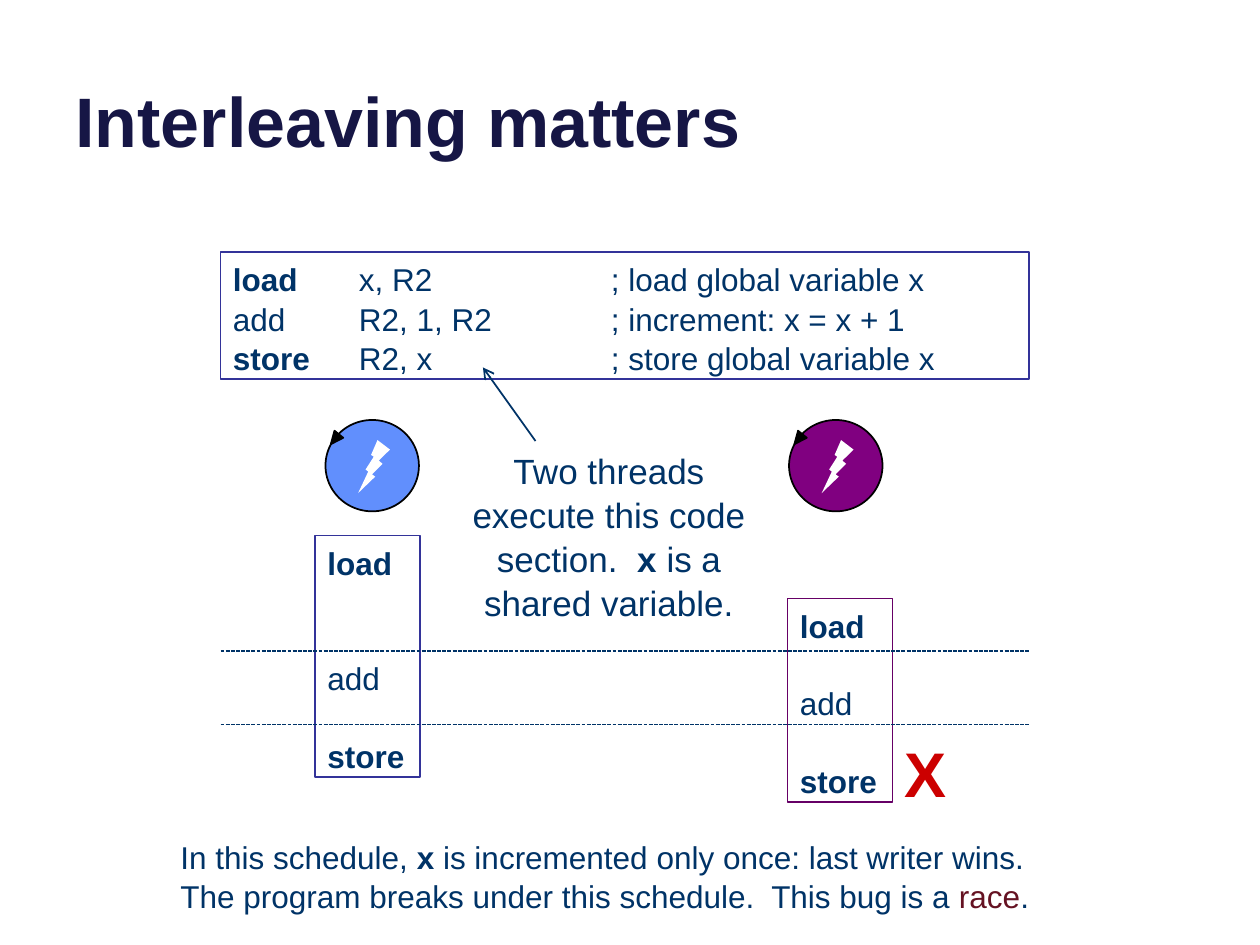
from lxml.etree import SubElement
from pptx import Presentation
from pptx.dml.color import RGBColor
from pptx.enum.dml import MSO_LINE
from pptx.enum.shapes import MSO_CONNECTOR as Link, MSO_SHAPE as Preset
from pptx.enum.text import MSO_ANCHOR as Anchor, MSO_AUTO_SIZE as AutoSize, PP_ALIGN as Align
from pptx.oxml.ns import qn
from pptx.util import Inches, Pt

UNIT = Inches(1) / 12
INK, NAVY, INDIGO, PLUM = "003367", "161645", "333399", "660066"
BLACK, WHITE, RED, MAROON = "000000", "FFFFFF", "CC0000", "651222"
LINE_SPACING = 1.05
BLANK_LINE = 21.7


def color(value):
    """Turn a hex string into a colour."""
    return RGBColor.from_string(value)


def place(box):
    """Turn a box in grid units (twelve to the inch) into lengths."""
    return [round(value * UNIT) for value in box]


def add_span(para, text, size=18, ink=INK, bold=False):
    """Add one formatted run to a paragraph."""
    span = para.add_run()
    span.text = text
    span.font.name, span.font.size, span.font.bold = "Arial", Pt(size), bold
    span.font.color.rgb = color(ink)


def write(frame, lines, align=Align.LEFT, blanks=(), tabs=()):
    """Fill a text frame with lines, each a list of span arguments."""
    frame.word_wrap = True
    frame.auto_size = AutoSize.NONE
    frame.vertical_anchor = Anchor.TOP
    for index, spans in enumerate(lines):
        para = frame.add_paragraph() if index else frame.paragraphs[0]
        para.alignment = align
        para.line_spacing = LINE_SPACING
        if blanks:
            para.space_before = Pt(blanks[index] * BLANK_LINE)
        if tabs:
            stops = SubElement(para._p.get_or_add_pPr(), qn("a:tabLst"))
            for inches in tabs:
                SubElement(stops, qn("a:tab"), pos=str(Inches(inches)), algn="l")
        for span in spans:
            add_span(para, *span)


def add_preset(parent, preset, box, fill, line=None):
    """Add a filled preset shape, outlined if a line colour is given."""
    shape = parent.shapes.add_shape(preset, *place(box))
    shape.shadow.inherit = False
    shape.fill.solid()
    shape.fill.fore_color.rgb = color(fill)
    if line:
        shape.line.color.rgb = color(line)
        shape.line.width = Pt(1)
    else:
        shape.line.fill.background()
    return shape


def add_note(page, box, lines, align=Align.LEFT):
    """Add a plain text box."""
    write(page.shapes.add_textbox(*place(box)).text_frame, lines, align)


def add_line(page, ends, width, dash=None, arrow=False):
    """Add a straight line, dashed or with an arrowhead at its end."""
    line = page.shapes.add_connector(Link.STRAIGHT, *place(ends))
    line.line.color.rgb = color(INK)
    line.line.width = Pt(width)
    if dash:
        line.line.dash_style = dash
    if arrow:
        SubElement(line.line._get_or_add_ln(), qn("a:tailEnd"), type="arrow")
    SubElement(line._element.spPr, qn("a:effectLst"))


def add_title(page, box, text):
    """Place and format the title."""
    title = page.shapes.title
    title.left, title.top, title.width, title.height = place(box)
    frame = title.text_frame
    frame.auto_size = AutoSize.NONE
    frame.vertical_anchor = Anchor.BOTTOM
    para = frame.paragraphs[0]
    para.alignment = Align.LEFT
    add_span(para, text, 40, NAVY, True)


def add_code(page, box):
    """Add the listing that both threads execute."""
    shape = add_preset(page, Preset.RECTANGLE, box, WHITE, INDIGO)
    lines = [
        [("load", 18, INK, True), ("\tx, R2\t\t; load global variable x",)],
        [("add\tR2, 1, R2\t; increment: x = x + 1",)],
        [("store", 18, INK, True), ("\tR2, x\t\t; store global variable x",)],
    ]
    write(shape.text_frame, lines, tabs=(1, 2, 3))


def add_thread(page, box, fill):
    """Add a thread icon: a disc with a bolt and a rotation mark."""
    left, top, width, height = box
    icon = page.shapes.add_group_shape()
    add_preset(icon, Preset.OVAL, box, fill, BLACK)
    bolt = add_preset(icon, Preset.LIGHTNING_BOLT,
                      (left + 0.35 * width, top + 0.22 * height, 0.34 * width, 0.58 * height), WHITE)
    bolt._element.spPr.xfrm.set("flipH", "1")
    mark = add_preset(icon, Preset.ISOSCELES_TRIANGLE,
                      (left + 0.04 * width, top + 0.14 * height, 0.12 * width, 0.14 * height), BLACK, BLACK)
    mark.rotation = 219


def add_lane(page, box, line, blanks):
    """Add one thread's timeline, with blank lines before its steps."""
    shape = add_preset(page, Preset.RECTANGLE, box, WHITE, line)
    steps = [[(step, 18, INK, step != "add")] for step in ("load", "add", "store")]
    write(shape.text_frame, steps, blanks=blanks)


def build(page):
    """Lay out the slide."""
    add_title(page, (6, -4.4, 108, 20.4), "Interleaving matters")
    add_code(page, (21, 24, 77, 12.1))
    add_thread(page, (31, 40, 8.9, 8.7), "618FFD")
    add_thread(page, (75.15, 40, 8.9, 8.7), "800080")
    add_lane(page, (30, 51, 10, 23), INDIGO, (0, 2, 1))
    add_lane(page, (75, 57, 10, 19.4), PLUM, (0, 1, 1))
    for row in (62, 69):
        add_line(page, (21, row, 98, row), 0.75, MSO_LINE.SQUARE_DOT)
    add_note(page, (16, 79, 86, 8.5), [
        [("In this schedule, ",), ("x", 18, INK, True),
         (" is incremented only once: last writer wins.",)],
        [("The program breaks under this schedule.  This bug is a ",),
         ("race", 18, MAROON), (".",)],
    ])
    add_note(page, (43, 42, 30, 17.4), [
        [("Two threads execute this code section.  ", 20), ("x ", 20, INK, True),
         ("is a shared variable.", 20)],
    ], Align.CENTER)
    add_line(page, (51, 42, 46, 35), 1, arrow=True)
    add_note(page, (85, 69, 10, 8.5), [[("X", 36, RED, True)]])


def main():
    """Build and save the deck."""
    deck = Presentation()
    deck.slide_width, deck.slide_height = Inches(10), Inches(7.5)
    build(deck.slides.add_slide(deck.slide_layouts[5]))
    deck.save("out.pptx")


if __name__ == "__main__":
    main()
